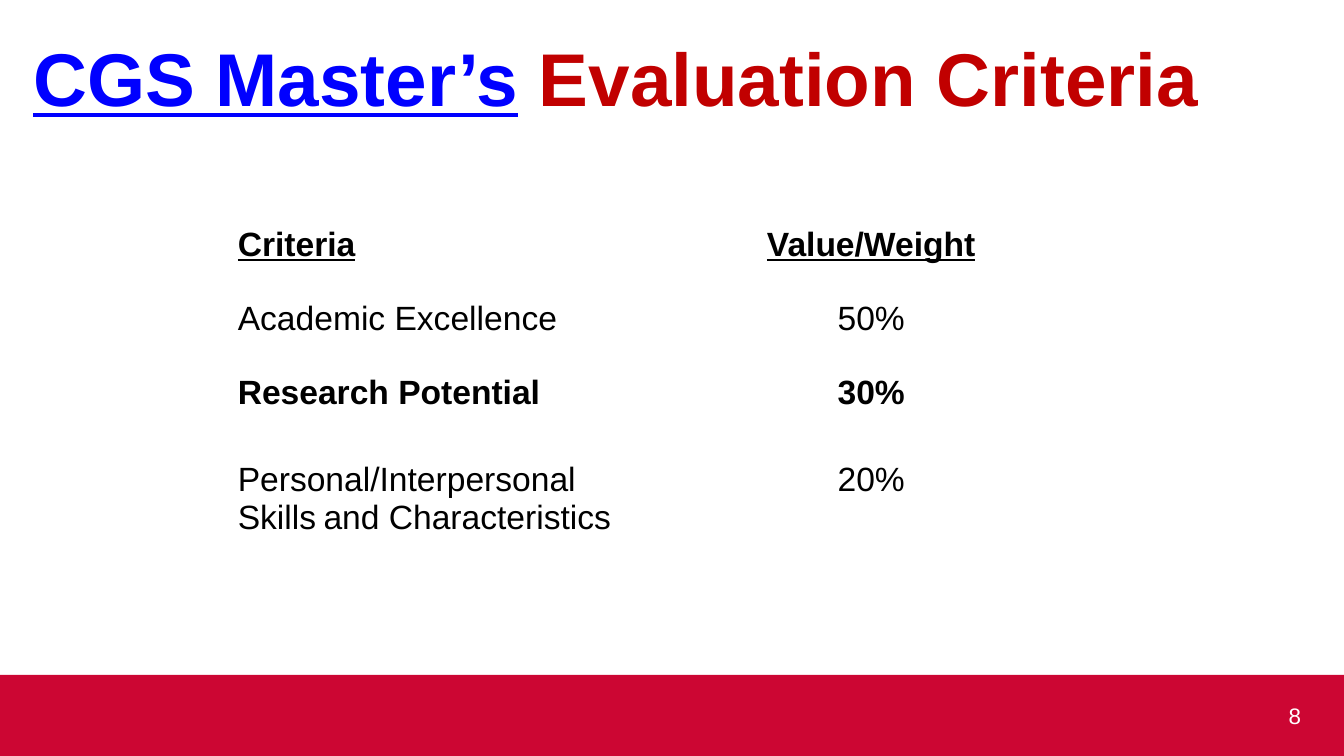
from pptx import Presentation
from pptx.dml.color import RGBColor
from pptx.enum.shapes import MSO_SHAPE
from pptx.enum.text import MSO_ANCHOR, PP_ALIGN
from pptx.util import Cm, Pt

TITLE = [("CGS Master’s", "link", True), (" Evaluation Criteria", "heading", False)]
SLIDE_NUMBER = "8"
CRITERIA = [
    {"cells": (["Criteria"], ["Value/Weight"]), "height": 1.4, "bold": True, "underline": True},
    {"cells": (["Academic Excellence"], ["50%"]), "height": 1.4},
    {"cells": (["Research Potential"], ["30%"]), "height": 1.65, "bold": True},
    {"cells": (["Personal/Interpersonal Skills", " ", "and Characteristics"], ["20%"]), "height": 2.44},
]
ALIGNMENTS = (PP_ALIGN.LEFT, PP_ALIGN.CENTER)

THEME = {
    "font": "Arial",
    "colors": {"band": "CC0633", "link": "0000FF", "heading": "C10000", "body": "000000", "light": "FFFFFF"},
    "sizes": {"title": 40, "body": 18, "space": 14, "number": 12},
}
SLIDE_WIDTH, SLIDE_HEIGHT = 25.4, 14.28
BAND_HEIGHT = 1.53
TABLE_LEFT, TABLE_TOP, COLUMN_WIDTH = 4.24, 4.14, 8.15


def theme_color(name):
    return RGBColor.from_string(THEME["colors"][name])


def write_text(paragraph, text, size="body", color="body", bold=False, underline=False, align=PP_ALIGN.LEFT):
    paragraph.alignment = align
    run = paragraph.add_run()
    run.text = text
    run.font.name = THEME["font"]
    run.font.size = Pt(THEME["sizes"][size])
    run.font.color.rgb = theme_color(color)
    run.font.bold = bold
    run.font.underline = underline


def add_text_box(slide, left, top, width, height, anchor=MSO_ANCHOR.TOP):
    frame = slide.shapes.add_textbox(Cm(left), Cm(top), Cm(width), Cm(height)).text_frame
    frame.word_wrap = True
    frame.vertical_anchor = anchor
    return frame.paragraphs[0]


def add_band(slide):
    band = slide.shapes.add_shape(
        MSO_SHAPE.RECTANGLE, 0, Cm(SLIDE_HEIGHT - BAND_HEIGHT), Cm(SLIDE_WIDTH), Cm(BAND_HEIGHT)
    )
    band.shadow.inherit = False
    band.fill.solid()
    band.fill.fore_color.rgb = theme_color("band")
    band.line.fill.background()


def add_criteria_table(slide):
    height = sum(row["height"] for row in CRITERIA)
    table = slide.shapes.add_table(
        len(CRITERIA), len(ALIGNMENTS), Cm(TABLE_LEFT), Cm(TABLE_TOP),
        Cm(COLUMN_WIDTH * len(ALIGNMENTS)), Cm(height),
    ).table
    table.first_row = False
    table.horz_banding = False
    for column in table.columns:
        column.width = Cm(COLUMN_WIDTH)
    for row_index, row in enumerate(CRITERIA):
        table.rows[row_index].height = Cm(row["height"])
        for column_index, (texts, align) in enumerate(zip(row["cells"], ALIGNMENTS)):
            cell = table.cell(row_index, column_index)
            cell.fill.background()
            for text in texts:
                write_text(
                    cell.text_frame.paragraphs[0], text, align=align,
                    size="body" if text.strip() else "space",
                    bold=row.get("bold", False), underline=row.get("underline", False),
                )


def main():
    presentation = Presentation()
    presentation.slide_width = Cm(SLIDE_WIDTH)
    presentation.slide_height = Cm(SLIDE_HEIGHT)
    slide = presentation.slides.add_slide(presentation.slide_layouts[6])

    add_band(slide)
    number = add_text_box(slide, 18.92, 13.13, 5.92, 0.76, MSO_ANCHOR.MIDDLE)
    write_text(number, SLIDE_NUMBER, size="number", color="light", align=PP_ALIGN.RIGHT)
    title = add_text_box(slide, 0.38, 0.48, 23.34, 1.96)
    for text, color, underline in TITLE:
        write_text(title, text, size="title", color=color, bold=True, underline=underline)
    add_criteria_table(slide)
    presentation.save("out.pptx")


if __name__ == "__main__":
    main()
